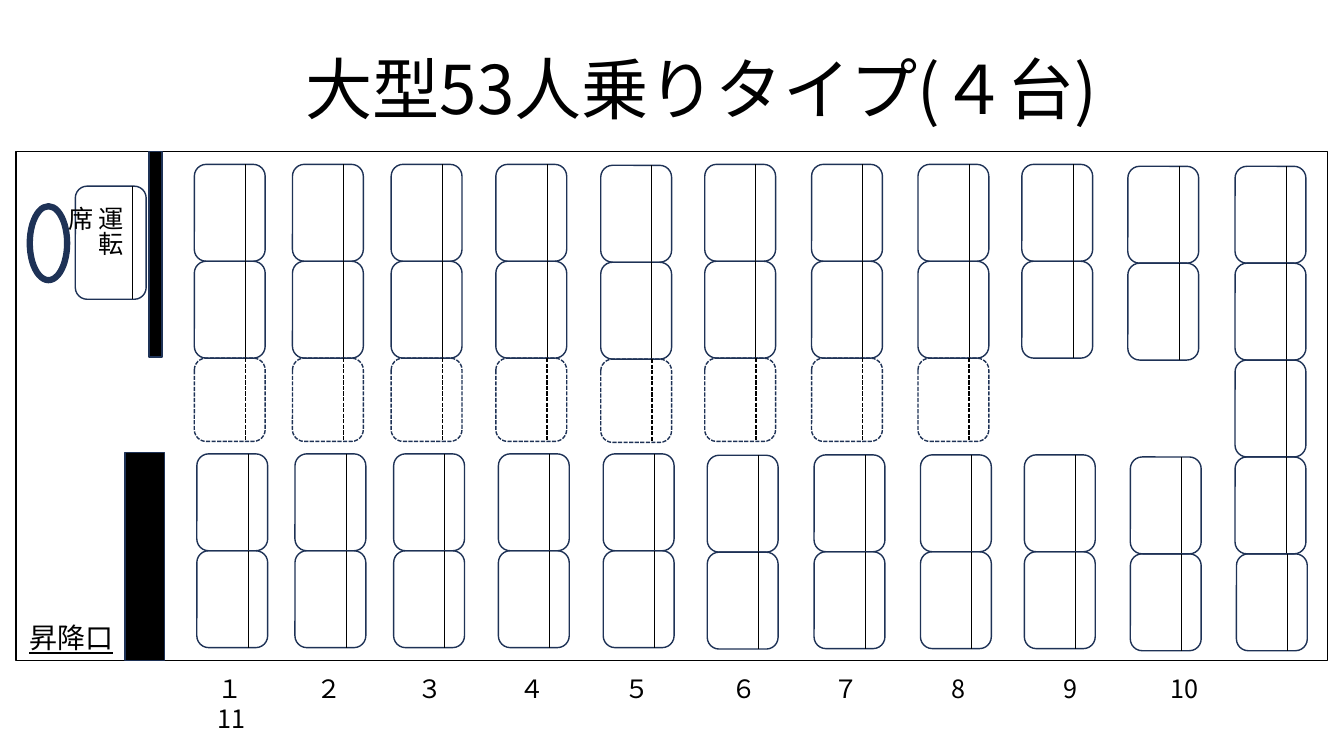
from pptx import Presentation, util as u
from pptx.dml.color import RGBColor
from pptx.enum import dml, shapes, text
from pptx.oxml.ns import qn
from lxml import etree

Pt = u.Pt
FONT, BLACK, NAVY = "Noto Sans CJK JP", "000000", "1E3256"

# Content: text
TITLE = "大型53人乗りタイプ(４台)"
DRIVER, DOOR = "運転席", "昇降口"
ROW_NUMBERS = ["１", "２", "３", "４", "５", "６", "７", "8", "9", "10"]
LAST_NUMBER = "11"
NUMBER_TABS = [80, 151.5, 224.5, 300, 376, 449, 529, 609.5, 691]

# Content: seat rows as (left, top of window pair, top of door-side pair, aisle seat)
ROWS = [
    (138.8, 117.4, 324.2, True),
    (208.9, 117.4, 324.2, True),
    (279.4, 117.4, 324.2, True),
    (354.2, 117.4, 324.2, True),
    (429.1, 118.1, 324.2, True),
    (503.4, 117.4, 325.2, True),
    (579.7, 117.4, 324.9, True),
    (655.7, 117.4, 324.9, True),
    (729.9, 117.4, 324.9, False),
    (805.6, 118.8, 326.4, False),
]
BACK_ROW = (882.2, 118.8, 5)
SEAT_W, SEAT_H, AISLE_H, BACK_X = 50.6, 69.2, 59.5, 36.5
DOOR_SIDE_SHIFT = 1.8

prs = Presentation()
prs.slide_width, prs.slide_height = Pt(960), Pt(540)
s = prs.slides.add_slide(prs.slide_layouts[6])


def color(value):
    return RGBColor.from_string(value)


def set_line(line, value, width, dashed=False):
    line.color.rgb = color(value)
    line.width = Pt(width)
    if dashed:
        line.dash_style = dml.MSO_LINE.SQUARE_DOT


def add_box(parent, kind, x, y, w, h, line, width=1, fill=None, dashed=False):
    sp = parent.add_shape(kind, Pt(x), Pt(y), Pt(w), Pt(h))
    sp.shadow.inherit = False
    if fill:
        sp.fill.solid()
        sp.fill.fore_color.rgb = color(fill)
    else:
        sp.fill.background()
    set_line(sp.line, line, width, dashed)


def add_seat(x, y, w=SEAT_W, h=SEAT_H, back=BACK_X, dashed=False):
    group = s.shapes.add_group_shape().shapes
    add_box(group, shapes.MSO_SHAPE.ROUNDED_RECTANGLE, x, y, w, h, NAVY, dashed=dashed)
    c = group.add_connector(shapes.MSO_CONNECTOR.STRAIGHT,
                            Pt(x + back), Pt(y), Pt(x + back), Pt(y + h))
    set_line(c.line, BLACK, 1 if dashed else 0.5, dashed)
    etree.SubElement(c._element.spPr, qn("a:effectLst"))


def add_run(p, words, size, underline=None):
    r = p.add_run()
    r.text = words
    r.font.size, r.font.name, r.font.underline = Pt(size), FONT, underline
    r.font.color.rgb = color(BLACK)
    etree.SubElement(r.font._element, qn("a:ea"), typeface=FONT)


def add_text(x, y, w, h, words, size, underline=None):
    tf = s.shapes.add_textbox(Pt(x), Pt(y), Pt(w), Pt(h)).text_frame
    tf.word_wrap = True
    add_run(tf.paragraphs[0], words, size, underline)
    return tf


# Title
tf = add_text(167, 29.5, 668, 66.2, TITLE, 48)
tf.vertical_anchor = text.MSO_ANCHOR.BOTTOM
tf.paragraphs[0].alignment = text.PP_ALIGN.CENTER
tf.paragraphs[0].line_spacing = 0.9

# Bus body, partitions and entrance
RECT = shapes.MSO_SHAPE.RECTANGLE
add_box(s.shapes, RECT, 11.6, 108.3, 936.8, 363.4, BLACK)
add_box(s.shapes, RECT, 89.3, 323.3, 28.2, 148.7, NAVY, fill=BLACK)
add_box(s.shapes, RECT, 106.5, 108.3, 9.3, 146.7, NAVY, fill=BLACK)
add_text(13.7, 440, 77.8, 31.5, DOOR, 20, underline=True)

# Steering wheel and driver's seat
add_box(s.shapes, shapes.MSO_SHAPE.OVAL, 21.3, 147.3, 26.7, 52.8, NAVY, 4.5)
add_seat(53.8, 133, 50.6, 80.8, 40.6)
tf = add_text(57, 140.4, 36, 66.2, DRIVER, 18)
tf._txBody.bodyPr.set("vert", "eaVert")

# Passenger rows
for x, top, door_top, has_aisle_seat in ROWS:
    for i in range(2):
        add_seat(x, top + i * SEAT_H)
        add_seat(x + DOOR_SIDE_SHIFT, door_top + i * SEAT_H)
    if has_aisle_seat:
        add_seat(x, top + 2 * SEAT_H, h=AISLE_H, dashed=True)

# Back row, its last seat slightly to the right
x, top, count = BACK_ROW
for i in range(count):
    add_seat(x + (1 if i == count - 1 else 0), top + i * SEAT_H)

# Row numbers on centred tab stops
tf = add_text(148.3, 477.4, 800, 29, "\t".join(ROW_NUMBERS), 18)
tabs = etree.SubElement(tf.paragraphs[0]._p.get_or_add_pPr(), qn("a:tabLst"))
for pos in NUMBER_TABS:
    etree.SubElement(tabs, qn("a:tab"), pos=str(Pt(pos)), algn="ctr")
add_run(tf.add_paragraph(), LAST_NUMBER, 18)

prs.save("out.pptx")
